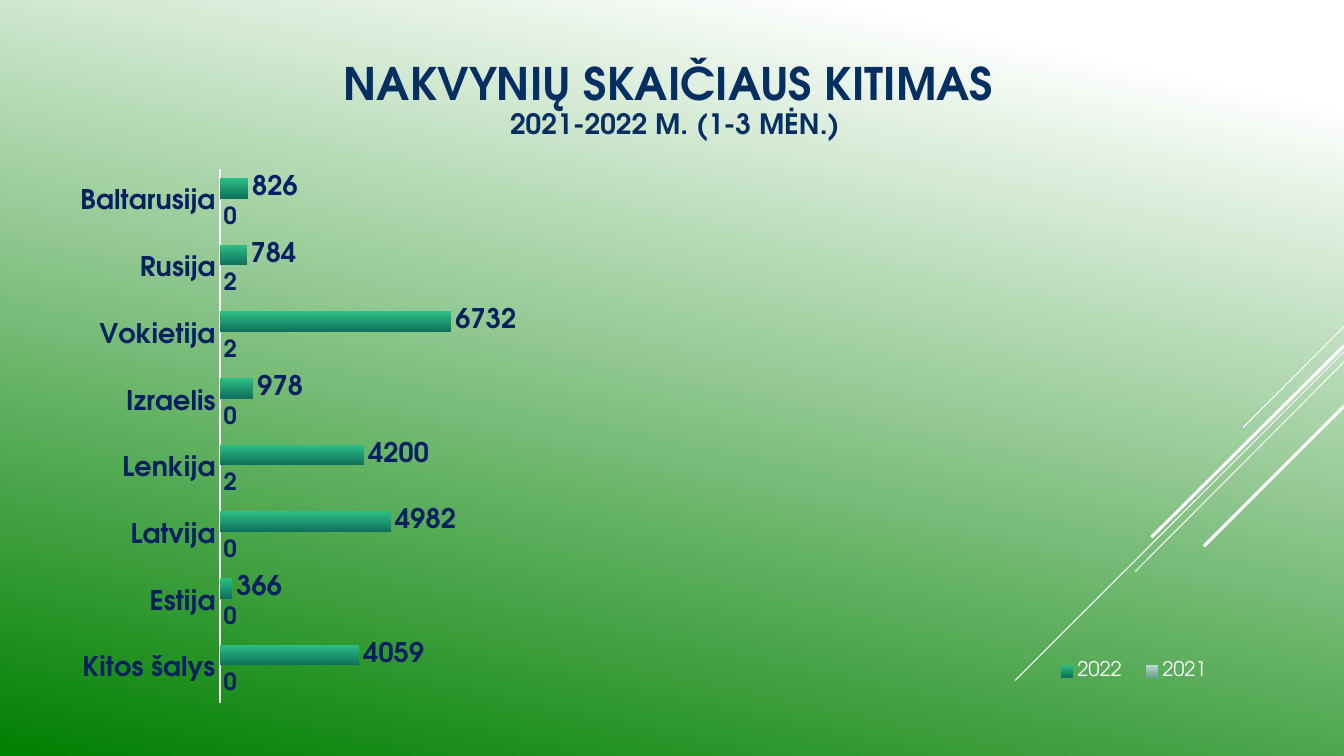
from copy import deepcopy

from lxml import etree
from pptx import Presentation
from pptx.chart.data import CategoryChartData
from pptx.dml.color import RGBColor
from pptx.enum import chart as ch, shapes, text
from pptx.oxml import parse_xml
from pptx.oxml.ns import nsdecls, qn
from pptx.util import Inches, Pt

FONT = "TeX Gyre Adventor"
WHITE = RGBColor(0xFF, 0xFF, 0xFF)
GREEN = RGBColor(0x00, 0x80, 0x00)
TITLE_BLUE = RGBColor(0x05, 0x2F, 0x61)
LABEL_BLUE = RGBColor(0x00, 0x20, 0x60)
PALE_TOP, PALE_BOTTOM = RGBColor(0xBF, 0xDD, 0xCF), RGBColor(0x6D, 0xA2, 0x91)
TEAL_TOP, TEAL_BOTTOM = RGBColor(0x2D, 0xC0, 0x84), RGBColor(0x0F, 0x72, 0x5E)


def style(font, size, color, bold=False):
    font.name, font.size, font.bold = FONT, Pt(size), bold
    font.color.rgb = color


def place(parent, position, x, y, w, h, inner=False):
    """Set a manual layout, in fractions of the chart, at a child position."""
    for old in parent.findall(qn("c:layout")):
        parent.remove(old)
    target = '<c:layoutTarget val="inner"/>' if inner else ""
    parent.insert(position, parse_xml(
        f'<c:layout {nsdecls("c")}><c:manualLayout>{target}'
        '<c:xMode val="edge"/><c:yMode val="edge"/>'
        f'<c:x val="{x}"/><c:y val="{y}"/><c:w val="{w}"/><c:h val="{h}"/>'
        '</c:manualLayout></c:layout>'))


prs = Presentation()
prs.slide_width, prs.slide_height = Inches(13.33), Inches(7.5)
slide = prs.slides.add_slide(prs.slide_layouts[6])

# Background: white corner fading to green
backdrop = slide.background.fill
backdrop.gradient()
backdrop.gradient_angle = 258
stop_list = slide.element.xpath(".//a:gsLst")[0]
stop_list.append(deepcopy(stop_list[-1]))
for stop, position, color in zip(backdrop.gradient_stops, (0, 0.1, 1), (WHITE, WHITE, GREEN)):
    stop.position = position
    stop.color.rgb = color

# Diagonal rays from the right edge: start height, end x, end y, weight
for start_y, end_x, end_y, weight in (
    (3.24, 12.33, 4.24, 0.75),
    (3.49, 10.07, 6.75, 0.75),
    (3.59, 11.26, 5.67, 0.75),
    (3.43, 11.42, 5.33, 2.25),
    (4.03, 11.94, 5.42, 2.25),
):
    ray = slide.shapes.add_connector(shapes.MSO_CONNECTOR.STRAIGHT, Inches(13.33),
                                     Inches(start_y), Inches(end_x), Inches(end_y))
    ray.line.color.rgb = WHITE
    ray.line.width = Pt(weight)
    etree.SubElement(ray._element.spPr, qn("a:effectLst"))

# Title
title = slide.shapes.add_textbox(Inches(0.34), Inches(0.41), Inches(12.71), Inches(1.18)).text_frame
title.word_wrap = True
title.vertical_anchor = text.MSO_ANCHOR.MIDDLE
heading = title.paragraphs[0]
heading.text = "NAKVYNIŲ SKAIČIAUS KITIMAS \v2021-2022 M. (1-3 MĖN.)"
heading.alignment = text.PP_ALIGN.CENTER
heading.line_spacing = 0.9
for run, size in zip(heading.runs, (32, 20)):
    style(run.font, size, TITLE_BLUE, True)

# Overnight stays by country
stays = CategoryChartData()
stays.categories = ["Kitos šalys", "Estija", "Latvija", "Lenkija",
                    "Izraelis", "Vokietija", "Rusija", "Baltarusija"]
stays.add_series("2021", (0, 0, 0, 2, 0, 2, 2, 0))
stays.add_series("2022", (4059, 366, 4982, 4200, 978, 6732, 784, 826))
chart = slide.shapes.add_chart(ch.XL_CHART_TYPE.BAR_CLUSTERED, Inches(0.33), Inches(1.46),
                               Inches(11.93), Inches(5.94), stays).chart
chart.has_title = False
style(chart.font, 10, WHITE)

countries = chart.category_axis
countries.major_tick_mark = ch.XL_TICK_MARK.NONE
countries.format.line.color.rgb = WHITE
countries.format.line.width = Pt(1.21)
style(countries.tick_labels.font, 19.3, LABEL_BLUE, True)

nights = chart.value_axis
nights.minimum_scale, nights.maximum_scale = 0, 29000
nights.has_major_gridlines = False
nights.tick_label_position = ch.XL_TICK_LABEL_POSITION.NONE
nights.format.line.fill.background()

plot = chart.plots[0]
plot.gap_width, plot.overlap = 85, -45
plot.vary_by_categories = False
for year, colors, label_size in zip(
    plot.series, ((PALE_TOP, PALE_BOTTOM), (TEAL_TOP, TEAL_BOTTOM)), (16.9, 19.3)
):
    year.invert_if_negative = False
    bar_fill = year.format.fill
    bar_fill.gradient()
    bar_fill.gradient_angle = 270
    for stop, position, color in zip(bar_fill.gradient_stops, (0, 1), colors):
        stop.position = position
        stop.color.rgb = color
    labels = year.data_labels
    labels.show_value = True
    labels.position = ch.XL_LABEL_POSITION.OUTSIDE_END
    style(labels.font, label_size, LABEL_BLUE, True)

chart.has_legend = True
legend = chart.legend
legend.position = ch.XL_LEGEND_POSITION.RIGHT
legend.include_in_layout = False
style(legend.font, 14.4, WHITE)

place(chart._chartSpace.chart.plotArea, 0, 0.155, 0.037, 0.83, 0.891, inner=True)
place(legend._element, 1, 0.84, 0.84, 0.15, 0.07)

prs.save("out.pptx")
